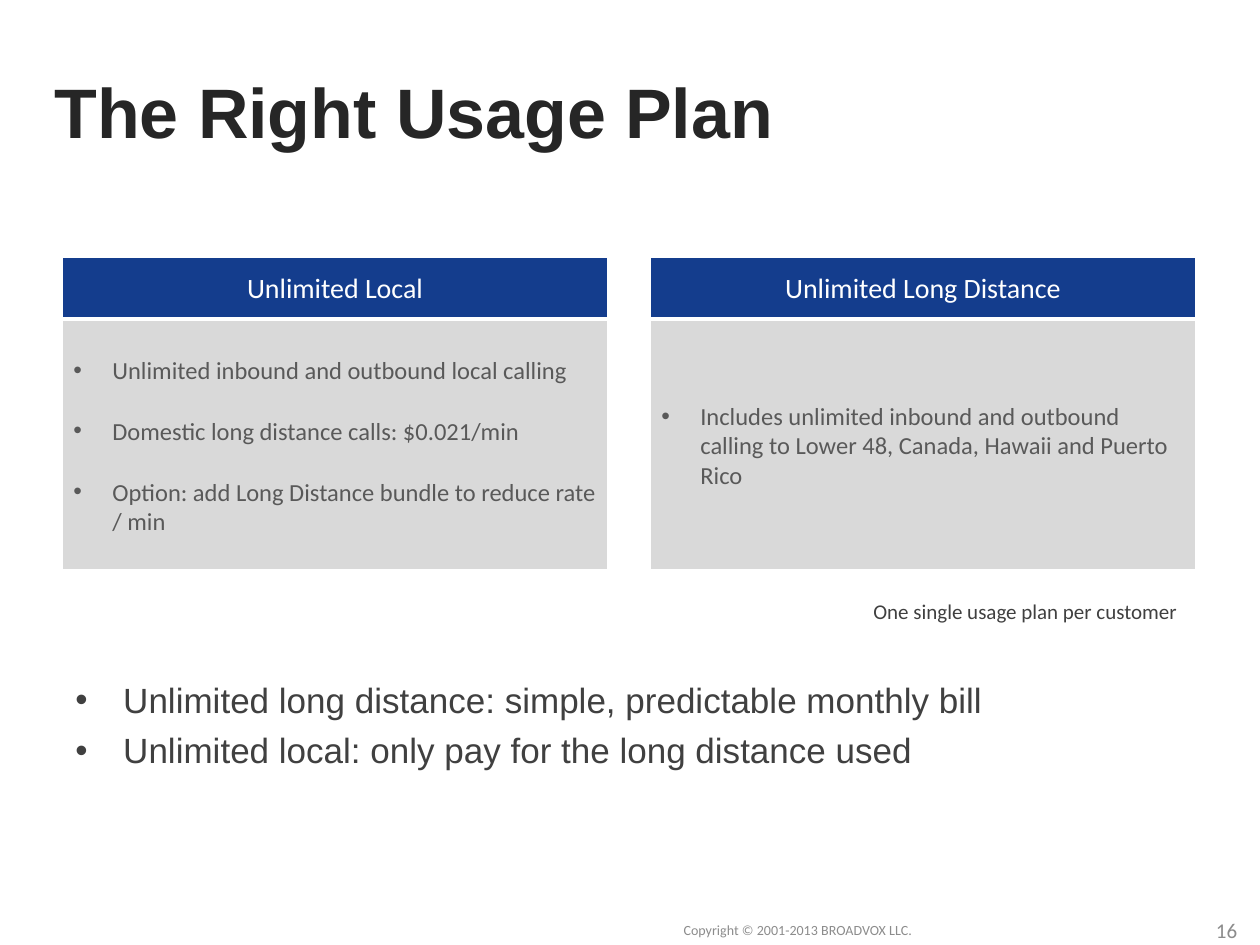
"""Builds the usage plan slide: two plan panels, a caption and two takeaways."""
from lxml.etree import SubElement
from pptx import Presentation
from pptx.dml.color import RGBColor
from pptx.enum.shapes import MSO_SHAPE
from pptx.enum.text import MSO_ANCHOR as ANCHOR, MSO_AUTO_SIZE as FIT, PP_ALIGN as ALIGN
from pptx.oxml.ns import qn
from pptx.util import Inches, Pt

WHITE = RGBColor(0xFF, 0xFF, 0xFF)
NAVY = RGBColor(0x14, 0x3D, 0x8D)
PANEL = RGBColor(0xD9, 0xD9, 0xD9)
TITLE = RGBColor(0x26, 0x26, 0x26)
BODY = RGBColor(0x40, 0x40, 0x40)
DETAIL = RGBColor(0x59, 0x59, 0x59)
FOOTER = RGBColor(0x8C, 0x8C, 0x8C)

prs = Presentation()
prs.slide_width, prs.slide_height = Inches(10), Inches(7.5)
COL, ROW = prs.slide_width / 60, prs.slide_height / 45
s = prs.slides.add_slide(prs.slide_layouts[6])


def add_text(lines, x, y, w, h, size, color, font="Calibri", bold=False, align=ALIGN.LEFT,
             anchor=ANCHOR.MIDDLE, fill=None, indent=0, before=0, after=0, wrap=True):
    box = [round(v) for v in (x * COL, y * ROW, w * COL, h * ROW)]
    if fill is None:
        sp = s.shapes.add_textbox(*box)
    else:
        sp = s.shapes.add_shape(MSO_SHAPE.RECTANGLE, *box)
        sp.shadow.inherit = False
        sp.fill.solid()
        sp.fill.fore_color.rgb = fill
        sp.line.color.rgb = WHITE
        sp.line.width = Pt(2)
    tf = sp.text_frame
    tf.word_wrap = wrap
    tf.vertical_anchor = anchor
    if not wrap:
        tf.auto_size = FIT.SHAPE_TO_FIT_TEXT
    for i, line in enumerate(lines):
        p = tf.paragraphs[0] if i == 0 else tf.add_paragraph()
        p.alignment = align
        p.space_before = Pt(before if i else 0)
        p.space_after = Pt(after)
        if indent:
            pPr = p._p.get_or_add_pPr()
            pPr.set("marL", str(Inches(indent)))
            pPr.set("indent", str(-Inches(indent)))
            SubElement(pPr, qn("a:buFont"), typeface="Arial")
            SubElement(pPr, qn("a:buChar"), char="•")
        r = p.add_run()
        r.text = line
        r.font.name, r.font.size, r.font.bold = font, Pt(size), bold
        r.font.color.rgb = color


add_text(["The Right Usage Plan"], 2, 2.5, 56, 5.5, 40, TITLE, font="Arial", bold=True)
add_text(["16"], 45.5, 43.1, 14, 2.4, 12, FOOTER, align=ALIGN.RIGHT)
add_text(["Copyright © 2001-2013 BROADVOX LLC."], 28.5, 43.1, 19, 2.4, 8, FOOTER,
         align=ALIGN.CENTER)

plans = [
    ("Unlimited Local", ["Unlimited inbound and outbound local calling",
                         "Domestic long distance calls: $0.021/min",
                         "Option: add Long Distance bundle to reduce rate / min"]),
    ("Unlimited Long Distance", ["Includes unlimited inbound and outbound calling to "
                                 "Lower 48, Canada, Hawaii and Puerto Rico"]),
]
for i, (name, details) in enumerate(plans):
    x = 2.9 + 28 * i
    add_text(details, x, 15.2, 26.1, 12, 14, DETAIL, fill=PANEL, indent=0.31, before=6, after=12)
    add_text([name], x, 12.2, 26.1, 3, 16, WHITE, fill=NAVY, align=ALIGN.CENTER)

add_text(["Unlimited long distance: simple, predictable monthly bill",
          "Unlimited local: only pay for the long distance used"],
         3, 32, 54, 7, 20, BODY, font="Arial", anchor=ANCHOR.TOP, indent=0.38, before=5)
add_text(["One single usage plan per customer"], 41, 28.2, 15.85, 1.8, 12, BODY,
         anchor=ANCHOR.TOP, wrap=False)

prs.save("out.pptx")
